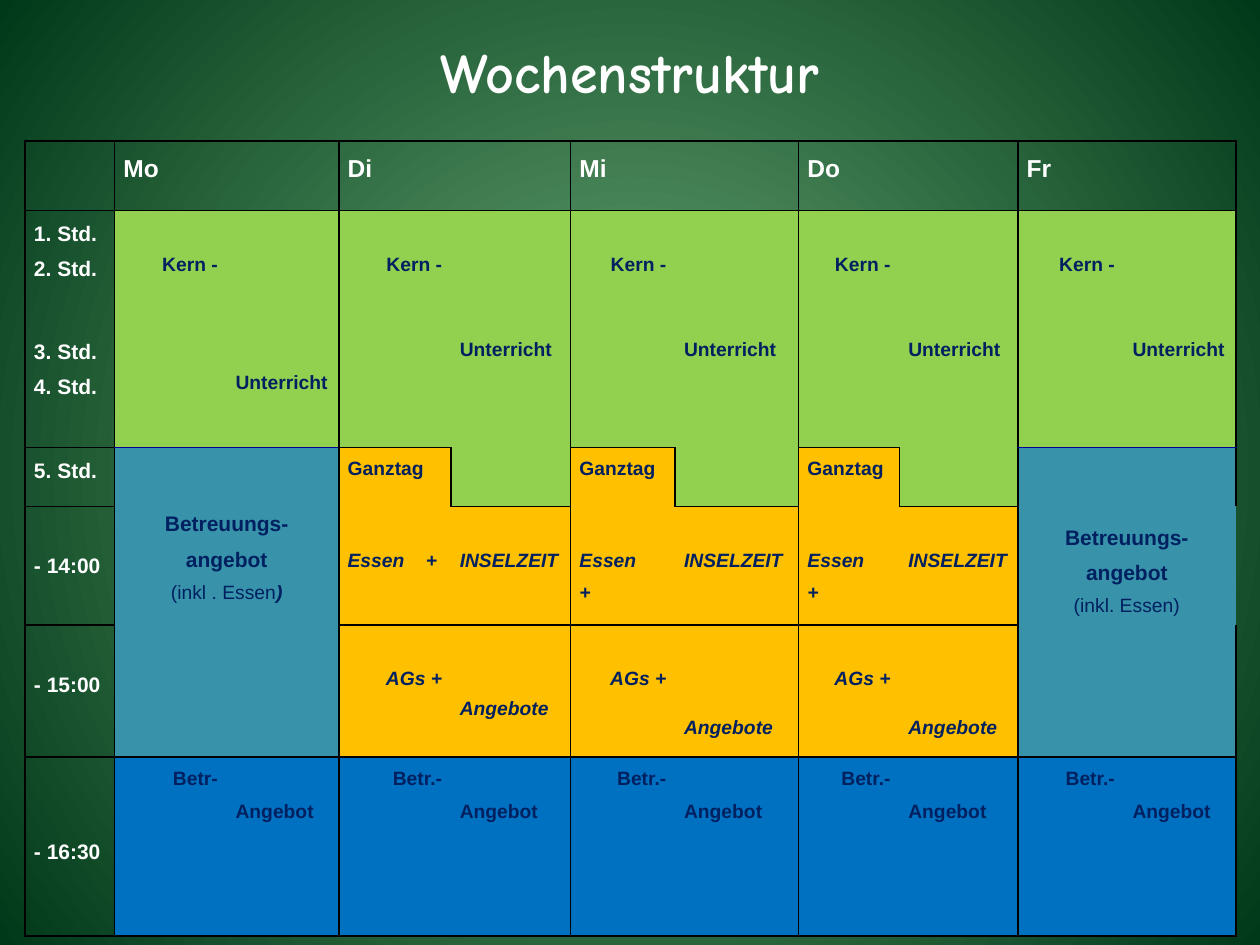
from pptx import Presentation
from pptx.dml.color import RGBColor
from pptx.enum.text import MSO_ANCHOR, PP_ALIGN
from pptx.util import Inches, Pt
from lxml import etree
from pptx.oxml.ns import qn

LEFT, CENTER, RIGHT = PP_ALIGN.LEFT, PP_ALIGN.CENTER, PP_ALIGN.RIGHT
TOP, MIDDLE = MSO_ANCHOR.TOP, MSO_ANCHOR.MIDDLE
WHITE = RGBColor(0xFF, 0xFF, 0xFF)
BLACK = RGBColor(0x00, 0x00, 0x00)
NAVY = RGBColor(0x00, 0x20, 0x60)
LINE_BLUE = RGBColor(0x00, 0x00, 0x99)
GREEN = RGBColor(0x92, 0xD0, 0x50)
ORANGE = RGBColor(0xFF, 0xC0, 0x00)
TEAL = RGBColor(0x37, 0x92, 0xAA)
BLUE = RGBColor(0x00, 0x70, 0xC0)
BG_LIGHT = RGBColor(0x6A, 0xA9, 0x74)
BG_DARK = RGBColor(0x00, 0x39, 0x19)
NO_STYLE = "{2D5ABB26-0587-4C30-8999-92F81FD0307C}"


def put(cell, *lines, size=11, color=NAVY, bold=True, italic=False,
        align=LEFT, anchor=TOP, top=0):
    cell.margin_top = Inches(top)
    cell.vertical_anchor = anchor
    tf = cell.text_frame
    for i, line in enumerate(lines):
        p = tf.add_paragraph() if i else tf.paragraphs[0]
        p.alignment = align
        p.line_spacing = 1.5
        r = p.add_run()
        r.text = line
        r.font.name = "Arial"
        r.font.size = Pt(size)
        r.font.color.rgb = color
        r.font.bold = bold
        r.font.italic = italic


def border(cell, side, color):
    tcPr = cell._tc.get_or_add_tcPr()
    ln = etree.SubElement(tcPr, qn("a:ln" + side), w=str(Pt(1)))
    if color is None:
        etree.SubElement(ln, qn("a:noFill"))
    else:
        fill = etree.SubElement(ln, qn("a:solidFill"))
        etree.SubElement(fill, qn("a:srgbClr"), val=str(color))


prs = Presentation()
prs.slide_width, prs.slide_height = Inches(10), Inches(7.5)
s = prs.slides.add_slide(prs.slide_layouts[5])

bg = s.background.fill
bg.gradient()
for stop, color in zip(bg.gradient_stops, (BG_LIGHT, BG_DARK)):
    stop.color.rgb = color
lin = next(s.background._cSld.iter(qn("a:lin")))
circle = etree.Element(qn("a:path"), path="circle")
etree.SubElement(circle, qn("a:fillToRect"), l="50000", t="50000", r="50000", b="50000")
lin.getparent().replace(lin, circle)

title = s.shapes.title
title.left, title.top = Inches(0.75), Inches(0.13)
title.width, title.height = Inches(8.5), Inches(0.87)
tf = title.text_frame
tf.vertical_anchor = MIDDLE
p = tf.paragraphs[0]
p.alignment = CENTER
r = p.add_run()
r.text = "Wochenstruktur"
r.font.name = "Comic Neue"
r.font.size = Pt(32)
r.font.bold = True
r.font.color.rgb = WHITE

col_widths = [0.71, 0.89, 0.89, 0.89, 0.95, 0.83, 0.98, 0.8, 0.94, 0.84, 0.89]
row_heights = [0.55, 0.94, 0.94, 0.47, 0.94, 1.05, 1.42]
rows, cols = len(row_heights), len(col_widths)
frame = s.shapes.add_table(rows, cols, Inches(0.2), Inches(1.12),
                           Inches(sum(col_widths)), Inches(sum(row_heights)))
table = frame.table
table.first_row = table.horz_banding = False
frame._element.find(".//" + qn("a:tableStyleId")).text = NO_STYLE
for col, width in zip(table.columns, col_widths):
    col.width = Inches(width)
for row, height in zip(table.rows, row_heights):
    row.height = Inches(height)

full = dict.fromkeys(range(cols), BLACK)
row_lines = [
    full,
    full,
    {},
    {**dict.fromkeys((0, 3, 5, 7), BLACK), **dict.fromkeys((1, 2, 9, 10), LINE_BLUE)},
    dict.fromkeys((0, 4, 6, 8), BLACK),
    dict.fromkeys((0, 3, 4, 5, 6, 7, 8), BLACK),
    full,
    full,
]
column_lines = {0, 1, 3, 5, 7, 9, 11}
lesson_lines = column_lines | {4, 6, 8}

for y in range(rows):
    lines = lesson_lines if y == 3 else column_lines
    for x in range(cols):
        cell = table.cell(y, x)
        cell.margin_left = cell.margin_right = Inches(0.07)
        cell.margin_top = cell.margin_bottom = 0
        border(cell, "L", BLACK if x in lines else None)
        border(cell, "R", BLACK if x + 1 in lines else None)
        border(cell, "T", row_lines[y].get(x))
        border(cell, "B", row_lines[y + 1].get(x))
        if y == 0 or x == 0:
            cell.fill.background()
            continue
        if y == 6:
            color = BLUE
        elif y < 3:
            color = GREEN
        elif x in (1, 2, 9, 10):
            color = TEAL
        elif y == 3 and x % 2 == 0:
            color = GREEN
        else:
            color = ORANGE
        cell.fill.solid()
        cell.fill.fore_color.rgb = color

hours = [
    (("1. Std.", "2. Std."), 0),
    (("3. Std.", "4. Std."), 0),
    (("5. Std.",), 0),
    (("- 14:00",), 0.29),
    (("- 15:00",), 0.29),
    (("- 16:30",), 0.57),
]
for y, (labels, top) in enumerate(hours, 1):
    put(table.cell(y, 0), *labels, size=12, color=WHITE, top=top)

for i, day in enumerate(("Mo", "Di", "Mi", "Do", "Fr")):
    x = 1 + 2 * i
    monday = day == "Mo"
    put(table.cell(0, x), day, size=14, color=WHITE)
    put(table.cell(1, x), "Kern -", align=RIGHT, top=0.26)
    put(table.cell(2, x + 1), "Unterricht", top=0.26 if monday else 0)
    put(table.cell(6, x), "Betr-" if monday else "Betr.-", align=RIGHT)
    put(table.cell(6, x + 1), "Angebot", top=0.26)
    if day in ("Mo", "Fr"):
        continue
    tuesday = day == "Di"
    put(table.cell(3, x), "Ganztag")
    meal = ("Essen\t+",) if tuesday else ("Essen", "+")
    put(table.cell(4, x), *meal, italic=True, top=0.26)
    put(table.cell(4, x + 1), "INSELZEIT", italic=True, top=0.26)
    put(table.cell(5, x), "AGs +", align=RIGHT, italic=True, top=0.26)
    put(table.cell(5, x + 1), "Angebote", italic=True, top=0.5 if tuesday else 0.65)

pPr = table.cell(4, 3).text_frame.paragraphs[0]._p.get_or_add_pPr()
tabs = etree.SubElement(pPr, qn("a:tabLst"))
etree.SubElement(tabs, qn("a:tab"), pos=str(Inches(0.62)), algn="l")

table.cell(3, 1).merge(table.cell(4, 2))
table.cell(4, 9).merge(table.cell(4, 10))
for y, x, note, top in ((3, 1, "(inkl . Essen", 0.26), (4, 9, "(inkl. Essen)", 0)):
    cell = table.cell(y, x)
    put(cell, "Betreuungs-", "angebot", note, size=12, align=CENTER, anchor=MIDDLE, top=top)
    p = cell.text_frame.paragraphs[-1]
    p.runs[0].font.size = Pt(11)
    p.runs[0].font.bold = False
    if x == 1:
        r = p.add_run()
        r.text = ")"
        r.font.name = "Arial"
        r.font.size = Pt(11)
        r.font.color.rgb = NAVY
        r.font.bold = r.font.italic = True

prs.save("out.pptx")
